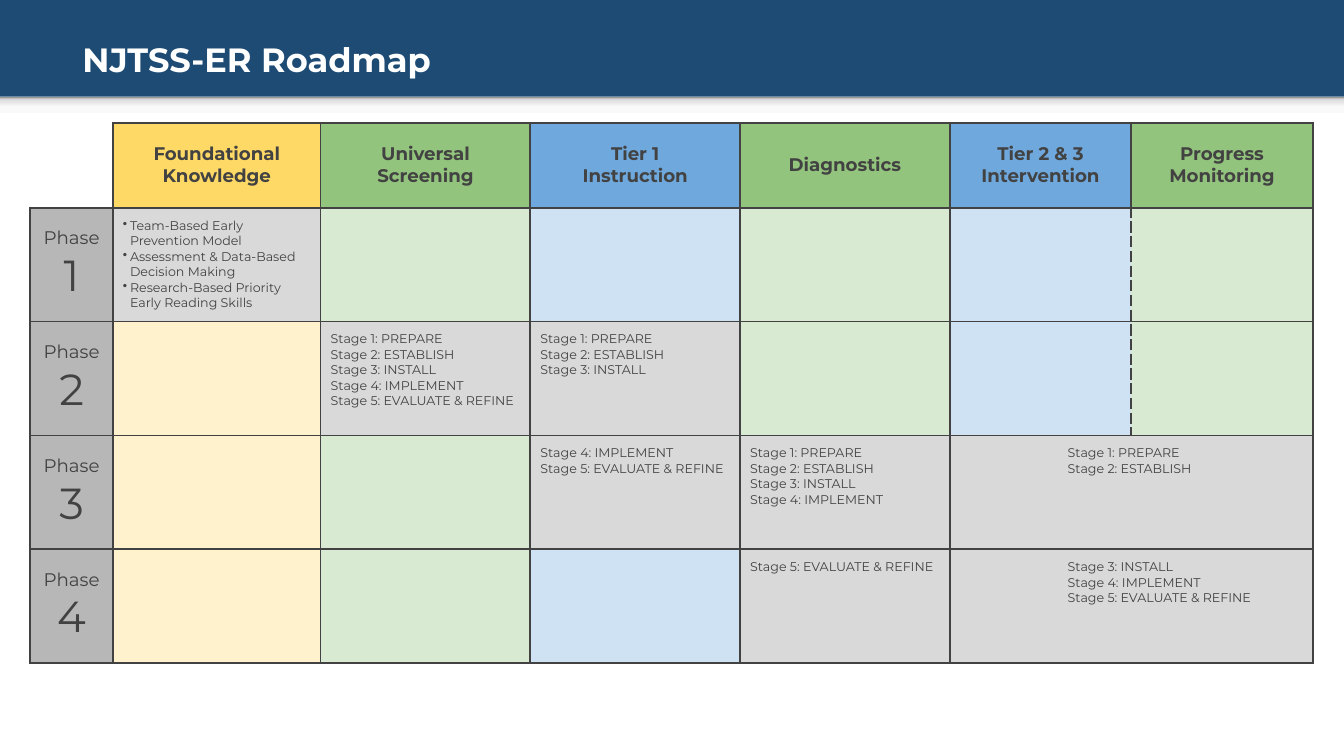
from lxml import etree
from pptx import Presentation
from pptx.dml.color import RGBColor
from pptx.enum.shapes import MSO_SHAPE
from pptx.enum.text import MSO_ANCHOR, PP_ALIGN
from pptx.oxml.ns import qn
from pptx.util import Inches, Pt

RECTANGLE = MSO_SHAPE.RECTANGLE
TOP, MIDDLE = MSO_ANCHOR.TOP, MSO_ANCHOR.MIDDLE
LEFT, CENTER = PP_ALIGN.LEFT, PP_ALIGN.CENTER

NAVY, WHITE, INK = "1E4B74", "FFFFFF", "424242"
PHASE_GRAY, STAGE_GRAY = "B7B7B7", "D9D9D9"
YELLOW, GREEN, BLUE = ("FFD966", "FFF2CC"), ("93C47D", "D9EAD3"), ("6FA8DC", "CFE2F3")

# Heading lines with the strong and pale colour of each column
COMPONENTS = [
    (["Foundational", "Knowledge"], YELLOW),
    (["Universal", "Screening"], GREEN),
    (["Tier 1", "Instruction"], BLUE),
    (["Diagnostics"], GREEN),
    (["Tier 2 & 3", "Intervention"], BLUE),
    (["Progress", "Monitoring"], GREEN),
]
FOUNDATIONS = [
    "Team-Based Early Prevention Model",
    "Assessment & Data-Based Decision Making",
    "Research-Based Priority Early Reading Skills",
]
STAGES = ["PREPARE", "ESTABLISH", "INSTALL", "IMPLEMENT", "EVALUATE & REFINE"]
# (phase, column): first and last stage
SCHEDULE = {
    (2, 2): (1, 5), (2, 3): (1, 3),
    (3, 3): (4, 5), (3, 4): (1, 4), (3, 5): (1, 2),
    (4, 4): (5, 5), (4, 5): (3, 5),
}
PHASES = range(1, 5)
INTERVENTION, MONITORING = 5, 6
SHARED_PHASES = (3, 4)
COLUMN_WIDTHS = [0.82, 2.06, 2.08, 2.08, 2.08, 1.8, 1.8]
ROW_HEIGHTS = [0.84] + [1.13] * len(PHASES)


def rgb(hex_color):
    return RGBColor.from_string(hex_color)


class RoadmapSlide:
    font = "Montserrat"

    def __init__(self, presentation):
        self.slide = presentation.slides.add_slide(presentation.slide_layouts[6])

    def background(self, color):
        fill = self.slide.background.fill
        fill.solid()
        fill.fore_color.rgb = rgb(color)

    def panel(self, left, top, width, height, color):
        panel = self.slide.shapes.add_shape(
            RECTANGLE, Inches(left), Inches(top), Inches(width), Inches(height))
        panel.shadow.inherit = False
        panel.line.fill.background()
        panel.fill.solid()
        panel.fill.fore_color.rgb = rgb(color)
        return panel

    def gradient_panel(self, left, top, width, height, stops):
        fill = self.panel(left, top, width, height, WHITE).fill
        fill.gradient()
        fill.gradient_angle = 90
        stop_list = fill._xPr.find(qn("a:gradFill")).find(qn("a:gsLst"))
        for default_stop in list(stop_list):
            stop_list.remove(default_stop)
        for percent, color in stops:
            stop = etree.SubElement(stop_list, qn("a:gs"), pos=str(percent * 1000))
            etree.SubElement(stop, qn("a:srgbClr"), val=color)

    def add_run(self, paragraph, text, size, color=INK, bold=False):
        run = paragraph.add_run()
        run.text = text
        run.font.name = self.font
        run.font.size = Pt(size)
        run.font.bold = bold
        run.font.color.rgb = rgb(color)

    def title(self, text, left, top, width, height):
        frame = self.slide.shapes.add_textbox(
            Inches(left), Inches(top), Inches(width), Inches(height)).text_frame
        frame.word_wrap = True
        frame.vertical_anchor = MIDDLE
        frame.paragraphs[0].line_spacing = 0.9
        self.add_run(frame.paragraphs[0], text, 24, WHITE, True)

    def table(self, left, top, widths, heights):
        table = self.slide.shapes.add_table(
            len(heights), len(widths), Inches(left), Inches(top),
            Inches(sum(widths)), Inches(sum(heights))).table
        table.first_row = table.horz_banding = False
        for column, width in zip(table.columns, widths):
            column.width = Inches(width)
        for row, height in zip(table.rows, heights):
            row.height = Inches(height)
        return table

    def cell_style(self, cell, color, **edges):
        """Fill a cell and rule it; edges overrides (colour, dash) of L, R, T or B."""
        cell.fill.solid()
        cell.fill.fore_color.rgb = rgb(color)
        properties = cell._tc.get_or_add_tcPr()
        for position, side in enumerate("LRTB"):
            edge_color, dash = edges.get(side, (INK, "solid"))
            line = etree.Element(qn("a:ln" + side), w=str(Pt(1.5)))
            solid = etree.SubElement(line, qn("a:solidFill"))
            etree.SubElement(solid, qn("a:srgbClr"), val=edge_color)
            etree.SubElement(line, qn("a:prstDash"), val=dash)
            properties.insert(position, line)

    def cell_text(self, cell, lines, align=LEFT, anchor=TOP, bold=False,
                  indent=0, bullet=False):
        """Write (text, size) lines, one paragraph each."""
        cell.margin_left = cell.margin_top = cell.margin_bottom = Inches(0.1)
        cell.margin_right = Inches(0.2 if bullet else 0.1)
        cell.vertical_anchor = anchor
        frame = cell.text_frame
        for number, (text, size) in enumerate(lines):
            paragraph = frame.add_paragraph() if number else frame.paragraphs[0]
            paragraph.alignment = align
            properties = paragraph._p.get_or_add_pPr()
            if indent:
                properties.set("marL", str(Inches(indent)))
                properties.set("indent", str(-Inches(indent) if bullet else 0))
            if bullet:
                etree.SubElement(properties, qn("a:buChar"), char="•")
            self.add_run(paragraph, text, size, bold=bold)


def main():
    presentation = Presentation()
    presentation.slide_width = Inches(13.33)
    presentation.slide_height = Inches(7.5)
    roadmap = RoadmapSlide(presentation)

    # Title band and the shade below it
    roadmap.background(NAVY)
    roadmap.panel(0, 0.96, 13.33, 6.54, WHITE)
    roadmap.gradient_panel(0, 0.96, 13.33, 0.16, [
        (0, "F9F9F9"), (36, "F9F9F9"), (80, "DEDEDE"), (100, "999999")])
    roadmap.title("NJTSS-ER Roadmap", 0.72, 0.03, 12, 1.17)

    # Grid with the open corner
    grid = roadmap.table(0.3, 1.22, COLUMN_WIDTHS, ROW_HEIGHTS)
    roadmap.cell_style(grid.cell(0, 0), WHITE, L=(WHITE, "solid"), T=(WHITE, "solid"))

    # Column headings
    for column, (heading, (strong, _)) in enumerate(COMPONENTS, start=1):
        cell = grid.cell(0, column)
        roadmap.cell_style(cell, strong)
        roadmap.cell_text(cell, [(line, 13) for line in heading], CENTER, MIDDLE, bold=True)

    # Phases
    for phase in PHASES:
        label = grid.cell(phase, 0)
        roadmap.cell_style(label, PHASE_GRAY)
        roadmap.cell_text(label, [("Phase", 13), (str(phase), 31)], CENTER, MIDDLE)
        shared = phase in SHARED_PHASES
        for column, (_, (_, pale)) in enumerate(COMPONENTS, start=1):
            cell = grid.cell(phase, column)
            active = (phase, column) in SCHEDULE or (phase, column) == (1, 1)
            edges = {}
            if not shared and column in (INTERVENTION, MONITORING):
                edges["R" if column == INTERVENTION else "L"] = (INK, "dash")
            roadmap.cell_style(cell, STAGE_GRAY if active else pale, **edges)
        if shared:
            grid.cell(phase, INTERVENTION).merge(grid.cell(phase, MONITORING))

    # Foundational knowledge and scheduled stages
    roadmap.cell_text(grid.cell(1, 1), [(topic, 9) for topic in FOUNDATIONS],
                      anchor=MIDDLE, indent=0.07, bullet=True)
    for (phase, column), (first, last) in SCHEDULE.items():
        lines = [(f"Stage {stage}: {STAGES[stage - 1]}", 9)
                 for stage in range(first, last + 1)]
        roadmap.cell_text(grid.cell(phase, column), lines,
                          indent=1.07 if column == INTERVENTION else 0)

    presentation.save("out.pptx")


if __name__ == "__main__":
    main()
